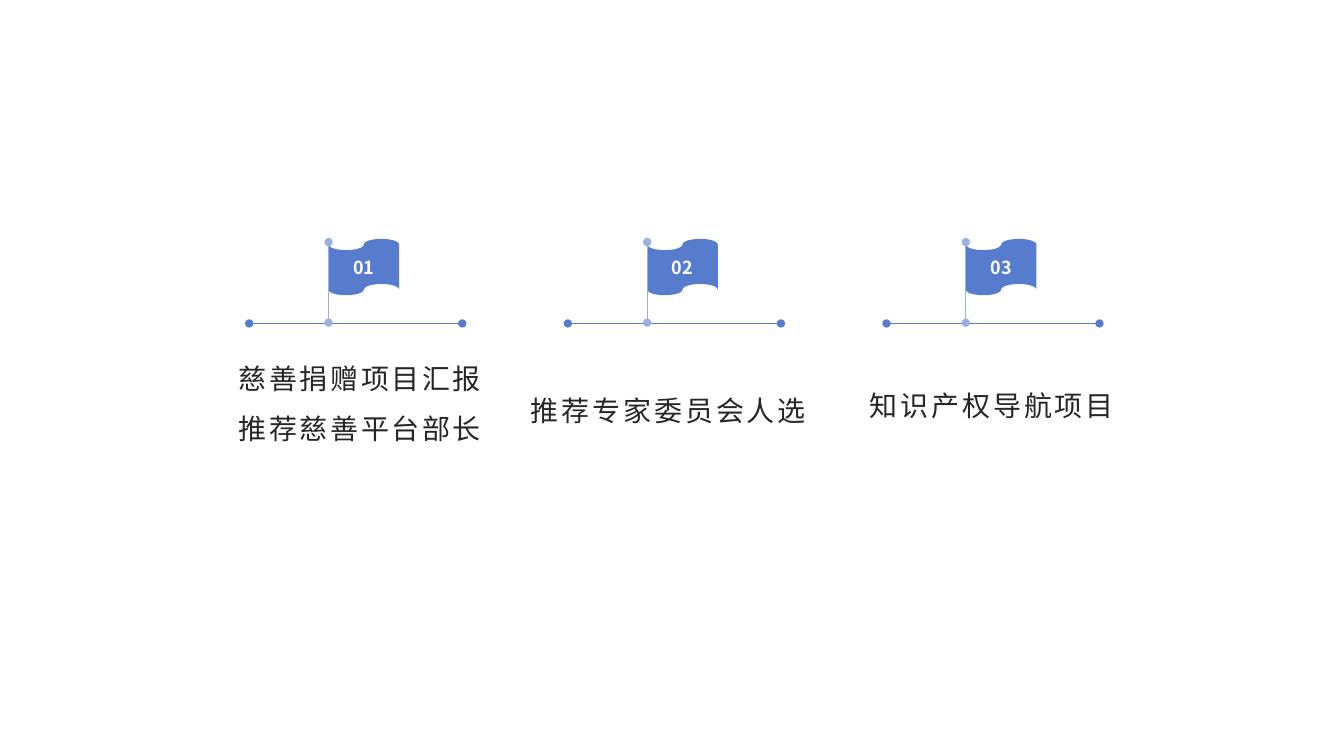
import dataclasses

import lxml.etree
import pptx
import pptx.dml.color
import pptx.enum.shapes
import pptx.enum.text
import pptx.oxml.ns
import pptx.util

Cm = pptx.util.Cm
Pt = pptx.util.Pt
RGBColor = pptx.dml.color.RGBColor
qualified = pptx.oxml.ns.qn

FONT = "Noto Sans CJK SC"
BLUE = RGBColor(0x57, 0x7C, 0xCE)
LIGHT_BLUE = RGBColor(0x9A, 0xB0, 0xE2)
DARK = RGBColor(0x26, 0x26, 0x26)
WHITE = RGBColor(0xFF, 0xFF, 0xFF)

# Milestone grid, in centimetres
FIRST_POLE = 8.28
PITCH = 8.03
BASE_Y = 8.15
BASE_OVERHANG = 2.0
BASE_WIDTH = 5.37


@dataclasses.dataclass(frozen=True)
class Milestone:
    caption: str
    left: float
    top: float
    width: float
    height: float
    line_spacing: float = 1.2
    tracking: float = 2


MILESTONES = [
    Milestone("慈善捐赠项目汇报推荐慈善平台部长", 5.77, 8.56, 6.91, 3.02, 1.5, 1.8),
    Milestone("推荐专家委员会人选", 13.13, 9.63, 7.9, 1.4),
    Milestone("知识产权导航项目", 21.67, 9.5, 7.09, 1.52),
]


def write_text(shape, text: str, *, size: float, color: RGBColor, bold: bool = False,
               align=None, line_spacing: float = 1, space_after: float = 0,
               tracking: float = 0) -> None:
    paragraph = shape.text_frame.paragraphs[0]
    paragraph.alignment = align
    paragraph.line_spacing = line_spacing
    paragraph.space_after = Pt(space_after)
    run = paragraph.add_run()
    run.text = text
    run.font.size = Pt(size)
    run.font.bold = bold
    run.font.color.rgb = color
    run.font.name = FONT
    properties = run.font._element
    properties.set("spc", str(round(tracking * 100)))
    lxml.etree.SubElement(properties, qualified("a:ea")).set("typeface", FONT)


def add_dotted_line(slide, x1: float, y1: float, x2: float, y2: float,
                    color: RGBColor) -> None:
    connector = slide.shapes.add_connector(
        pptx.enum.shapes.MSO_CONNECTOR.STRAIGHT, Cm(x1), Cm(y1), Cm(x2), Cm(y2))
    connector.line.color.rgb = color
    connector.line.width = Pt(1)
    line = connector.line._get_or_add_ln()
    for end in ("a:headEnd", "a:tailEnd"):
        lxml.etree.SubElement(line, qualified(end)).set("type", "oval")
    lxml.etree.SubElement(connector._element.spPr, qualified("a:effectLst"))


def add_flag(slide, left: float, label: str) -> None:
    flag = slide.shapes.add_shape(
        pptx.enum.shapes.MSO_SHAPE.FLOWCHART_PUNCHED_TAPE,
        Cm(left), Cm(6.02), Cm(1.78), Cm(1.42))
    flag.shadow.inherit = False
    flag.fill.solid()
    flag.fill.fore_color.rgb = BLUE
    flag.line.fill.background()
    frame = flag.text_frame
    frame.margin_left = frame.margin_right = frame.margin_top = frame.margin_bottom = 0
    frame.vertical_anchor = pptx.enum.text.MSO_ANCHOR.MIDDLE
    write_text(flag, label, size=12.8, color=WHITE, bold=True,
               align=pptx.enum.text.PP_ALIGN.CENTER)


def add_caption(slide, milestone: Milestone) -> None:
    box = slide.shapes.add_textbox(Cm(milestone.left), Cm(milestone.top),
                                   Cm(milestone.width), Cm(milestone.height))
    box.text_frame.word_wrap = True
    box.text_frame.auto_size = pptx.enum.text.MSO_AUTO_SIZE.TEXT_TO_FIT_SHAPE
    write_text(box, milestone.caption, size=20, color=DARK, space_after=8,
               line_spacing=milestone.line_spacing, tracking=milestone.tracking)


def main() -> None:
    presentation = pptx.Presentation()
    presentation.slide_width = Cm(33.87)
    presentation.slide_height = Cm(19.05)
    slide = presentation.slides.add_slide(presentation.slide_layouts[6])

    for index, milestone in enumerate(MILESTONES):
        pole = FIRST_POLE + index * PITCH
        base = pole - BASE_OVERHANG
        # Base line, flag and pole
        add_dotted_line(slide, base, BASE_Y, base + BASE_WIDTH, BASE_Y, BLUE)
        add_flag(slide, pole, f"{index + 1:02d}")
        add_dotted_line(slide, pole, 6.1, pole, 8.13, LIGHT_BLUE)
        # Caption below
        add_caption(slide, milestone)

    presentation.save("out.pptx")


if __name__ == "__main__":
    main()
